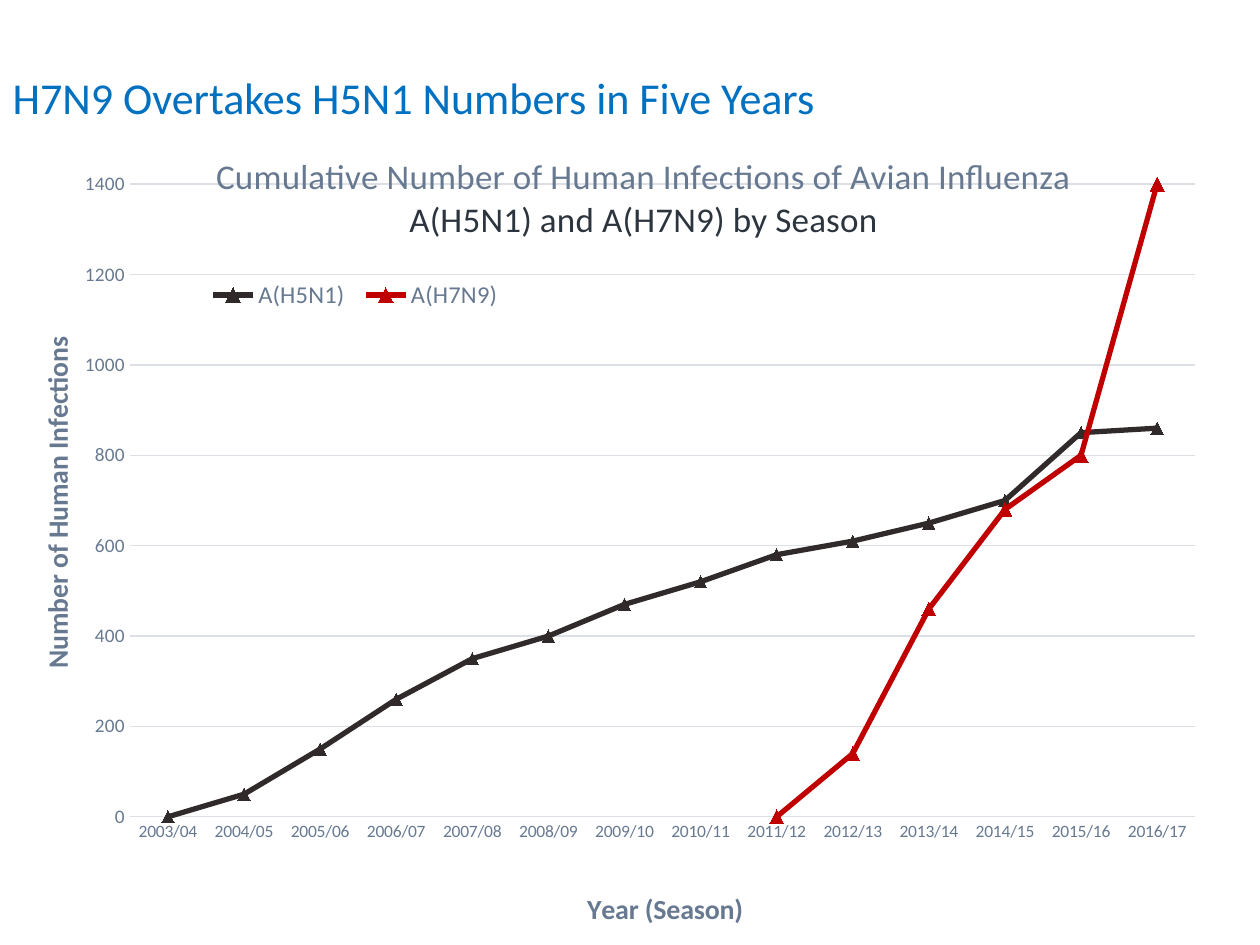
from lxml.etree import SubElement as Sub
from pptx import Presentation
from pptx.chart.data import CategoryChartData as Data
from pptx.dml.color import RGBColor as RGB
from pptx.enum.chart import XL_CHART_TYPE as Kind, XL_LEGEND_POSITION as Pos
from pptx.enum.chart import XL_MARKER_STYLE as Mark, XL_TICK_MARK as Tick
from pptx.enum.text import MSO_ANCHOR as Anchor, PP_ALIGN as Align
from pptx.oxml.ns import qn
from pptx.util import Cm, Pt

FONT = "Calibri"
HUES = {"head": "0070C0", "dark": "2C343E", "text": "677991", "grid": "DCE0E6",
        "ink": "302B2A", "red": "C00000", "navy": "002060"}
HEAD = "H7N9 Overtakes H5N1 Numbers in Five Years"
TITLE = [("Cumulative Number of Human Infections of Avian Influenza", "text"),
         ("A(H5N1) and A(H7N9) by Season", "dark")]
YEARS = [f"{y}/{(y + 1) % 100:02d}" for y in range(2003, 2017)]
# name, values, line hue, marker hue, marker size
ROWS = [
    ("A(H5N1)", [0, 50, 150, 260, 350, 400, 470, 520, 580, 610, 650, 700, 850, 860],
     "ink", "navy", 7),
    ("A(H7N9)", [None] * 8 + [0, 140, 460, 680, 800, 1400], "red", "red", 8),
]


def hue(name):
    return RGB.from_string(HUES[name])


def style(font, size, tone, bold=False):
    font.name, font.size, font.bold = FONT, Pt(size), bold
    font.color.rgb = hue(tone)


def write(frame, lines, size, bold=False):
    for i, (text, tone) in enumerate(lines):
        para = frame.add_paragraph() if i else frame.paragraphs[0]
        para.alignment = Align.CENTER
        run = para.add_run()
        run.text = text
        style(run.font, size, tone, bold)


def place(node, after, inner=False, **box):
    """Give a chart part a manual layout, in fractions of the chart."""
    for old in node.findall(qn("c:layout")):
        node.remove(old)
    lay = Sub(node, qn("c:layout"))
    man = Sub(lay, qn("c:manualLayout"))
    if inner:
        Sub(man, qn("c:layoutTarget")).set("val", "inner")
    for key in ("x", "y"):
        Sub(man, qn(f"c:{key}Mode")).set("val", "edge")
    for key, val in box.items():
        Sub(man, qn(f"c:{key}")).set("val", str(val))
    prev = node.find(qn(after)) if after else None
    node.insert(0 if prev is None else node.index(prev) + 1, lay)


def set_axis(axis, text, size, x, y):
    axis.major_tick_mark = axis.minor_tick_mark = Tick.NONE
    style(axis.tick_labels.font, size, "text")
    title = axis.axis_title
    write(title.text_frame, [(text, "text")], 16, True)
    place(title._element, "c:tx", x=x, y=y)


def rule(line, tone, width):
    line.color.rgb = hue(tone)
    line.width = Pt(width)


def add_head(slide):
    head = slide.shapes.title
    head.left, head.top, head.width, head.height = Cm(0), Cm(1.37), Cm(21.59), Cm(1.17)
    frame = head.text_frame
    frame.vertical_anchor = Anchor.MIDDLE
    para = frame.paragraphs[0]
    para.alignment = Align.LEFT
    run = para.add_run()
    run.text = HEAD
    style(run.font, 25.2, "head")


def add_graph(slide):
    data = Data()
    data.categories = YEARS
    for name, vals, *_ in ROWS:
        data.add_series(name, vals)
    chart = slide.shapes.add_chart(Kind.LINE_MARKERS, Cm(0.43), Cm(2.36),
                                   Cm(24.05), Cm(16.51), data).chart
    style(chart.font, 10, "dark")
    write(chart.chart_title.text_frame, TITLE, 20)
    chart.chart_title.include_in_layout = True
    place(chart.chart_title._element, "c:tx", x=0.16, y=0.04)
    area = chart._chartSpace.chart.plotArea
    place(area, None, True, x=0.091, y=0.083, w=0.893, h=0.782)

    cat, val = chart.category_axis, chart.value_axis
    set_axis(cat, "Year (Season)", 10, 0.47, 0.95)
    rule(cat.format.line, "grid", 0.75)
    set_axis(val, "Number of Human Infections", 11, 0.01, 0.27)
    val.minimum_scale, val.maximum_scale, val.major_unit = 0, 1400, 200
    val.format.line.fill.background()
    rule(val.major_gridlines.format.line, "grid", 0.75)

    chart.has_legend = True
    key = chart.legend
    key.position = Pos.BOTTOM
    key.include_in_layout = False
    style(key.font, 14, "text")
    place(key._element, "c:legendPos", x=0.15, y=0.2, w=0.26, h=0.04)

    chart.plots[0].vary_by_categories = False
    for row, (_, _, tone, fill, size) in zip(chart.plots[0].series, ROWS):
        row.smooth = False
        rule(row.format.line, tone, 3)
        mark = row.marker
        mark.style, mark.size = Mark.TRIANGLE, size
        mark.format.fill.solid()
        mark.format.fill.fore_color.rgb = hue(fill)
        mark.format.line.color.rgb = hue(fill)


def main():
    deck = Presentation()
    deck.slide_width, deck.slide_height = Cm(25.4), Cm(19.05)
    slide = deck.slides.add_slide(deck.slide_layouts[5])
    add_graph(slide)
    add_head(slide)
    deck.save("out.pptx")


if __name__ == "__main__":
    main()
